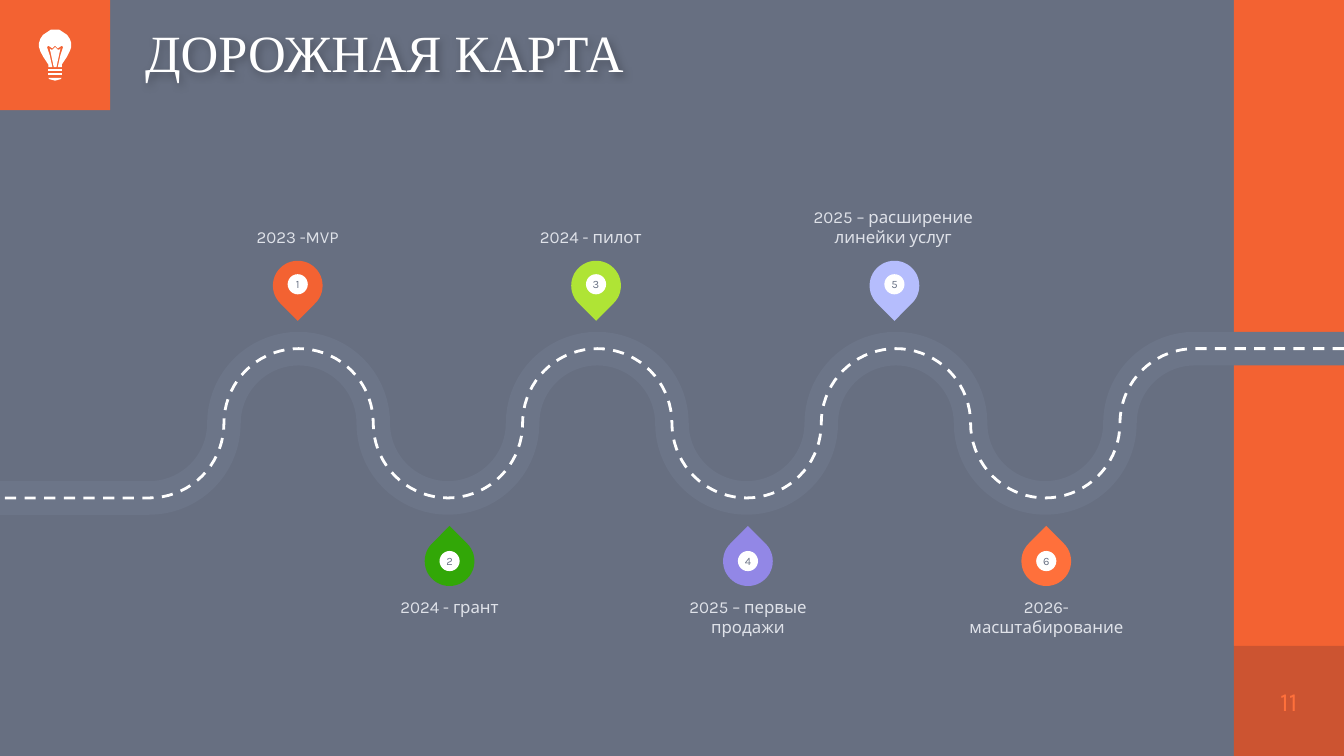
import math
from dataclasses import dataclass

from lxml import etree
from pptx import Presentation
from pptx.dml.color import RGBColor
from pptx.enum import dml, shapes, text
from pptx.oxml import ns
from pptx.util import Inches, Pt

HUES = {
    "navy": "02102E", "orange": "F36232", "white": "FFFFFF", "road": "6C7588",
    "label": "DFE2E9", "coral": "FF703B", "lime": "AFE435", "green": "32A707",
    "lilac": "B5BDFD", "violet": "9287E6",
}
WIDE, SIDE = 10, 0.82
HIGH = WIDE * 9 / 16
BEND = WIDE / 9  # distance between neighbouring bends of the road
MID = 3.15


@dataclass
class Stop:
    label: str
    hue: str
    left: float  # left edge of the label
    low: bool


STOPS = [
    Stop("2023 -MVP", "orange", 1.51, False),
    Stop("2024 - грант", "green", 2.64, True),
    Stop("2024 - пилот", "lime", 3.69, False),
    Stop("2025 – первые продажи", "violet", 4.86, True),
    Stop("2025 – расширение линейки услуг", "lilac", 5.94, False),
    Stop("2026- масштабирование", "coral", 7.08, True),
]

# Left halves of the bulb parts, in hundredths of an inch
BULB = [
    [(36, 54), (36, 56)],
    [(36, 51), (36, 53)],
    [(36, 58), (37, 59), (41, 60)],
    [(41, 35), (39, 37), (38, 37), (37, 36), (40, 50)],
    [(41, 22), (38, 22), (35, 24), (32, 26), (30, 29), (29, 32), (29, 35),
     (30, 38), (32, 42), (34, 45), (36, 48), (36, 50), (39, 50), (37, 41),
     (35, 35), (36, 34), (39, 36), (41, 34)],
]


def rgb(hue: str) -> RGBColor:
    return RGBColor.from_string(HUES[hue])


def paint(shape, hue: str, alpha: int = 100) -> None:
    shape.shadow.inherit = False
    shape.line.fill.background()
    shape.fill.solid()
    shape.fill.fore_color.rgb = rgb(hue)
    if alpha < 100:
        tone = shape.fill._xPr.find(".//" + ns.qn("a:srgbClr"))
        etree.SubElement(tone, ns.qn("a:alpha"), val=str(alpha * 1000))


def block(owner, kind, box: tuple, hue: str, alpha: int = 100):
    shape = owner.add_shape(kind, *map(Inches, box))
    paint(shape, hue, alpha)
    return shape


def write(shape, words: str, size: float, hue: str, anchor, font: str = "Karla",
          align=text.PP_ALIGN.CENTER):
    frame = shape.text_frame
    frame.margin_left = frame.margin_right = 0
    frame.margin_top = frame.margin_bottom = 0
    frame.word_wrap = True
    frame.vertical_anchor = anchor
    frame.text = words
    para = frame.paragraphs[0]
    para.alignment = align
    para.font.size, para.font.name = Pt(size), font
    para.font.color.rgb = rgb(hue)
    return para


def outline(owner, points: list, close: bool):
    spots = [(Inches(x), Inches(y)) for x, y in points]
    pen = owner.build_freeform(*spots[0])
    pen.add_line_segments(spots[1:], close=close)
    return pen.convert_to_shape()


def track() -> list:
    """Half circles from right to left, with a quarter circle at each end."""
    points, rad = [(WIDE, MID - BEND / 2)], BEND / 2
    for k in range(8, 0, -1):
        turn = -1 if k % 2 == 0 else 1
        first, last = (90 if k == 8 else 0), (90 if k == 1 else 180)
        for deg in range(first, last + 1, 5):
            a = math.radians(deg)
            points.append((k * BEND + rad * math.cos(a), MID + turn * rad * math.sin(a)))
    return points + [(0, MID + rad)]


def road(owner, points: list, hue: str, width: float, dash=None) -> None:
    line = outline(owner, points, False)
    line.shadow.inherit = False
    line.fill.background()
    line.line.color.rgb = rgb(hue)
    line.line.width = Pt(width)
    if dash:
        line.line.dash_style = dash


def pin(owner, num: int, stop: Stop) -> None:
    x = 2.03 + 1.11 * (num - 1) + (0.02 if stop.low else 0)
    y = 3.99 if stop.low else 1.94
    group = owner.add_group_shape().shapes
    drop = block(group, shapes.MSO_SHAPE.TEAR, (x, y, 0.37, 0.37), stop.hue)
    drop.rotation = 315 if stop.low else 135
    dot = block(group, shapes.MSO_SHAPE.OVAL,
                (x + 0.11, y + (0.11 if stop.low else 0.1), 0.15, 0.15), "white")
    write(dot, str(num), 6, "road", text.MSO_ANCHOR.MIDDLE)


def note(owner, stop: Stop) -> None:
    top = 4.44 if stop.low else 1.26
    box = owner.add_textbox(*map(Inches, (stop.left, top, 1.41, 0.58)))
    anchor = text.MSO_ANCHOR.TOP if stop.low else text.MSO_ANCHOR.BOTTOM
    write(box, stop.label, 9, "label", anchor)


def bulb(owner) -> None:
    group = owner.add_group_shape().shapes
    for half in BULB:
        whole = half + [(82 - x, y) for x, y in reversed(half)]
        part = outline(group, [(x / 100, y / 100) for x, y in whole], True)
        paint(part, "white")


def head(title) -> None:
    title.left, title.top, title.width, title.height = map(Inches, (1.08, 0, 8.1, SIDE))
    para = write(title, "ДОРОЖНАЯ КАРТА", 28, "white", text.MSO_ANCHOR.MIDDLE,
                 "Times New Roman", text.PP_ALIGN.LEFT)
    para.line_spacing = 0.9
    # Soft shadow under the letters
    glow = etree.SubElement(title._element.spPr, ns.qn("a:effectLst"))
    cast = etree.SubElement(glow, ns.qn("a:outerShdw"), blurRad="50800",
                            dist="25400", dir="2700000")
    tone = etree.SubElement(cast, ns.qn("a:srgbClr"), val="000000")
    etree.SubElement(tone, ns.qn("a:alpha"), val="25000")


def main() -> None:
    deck = Presentation()
    deck.slide_width, deck.slide_height = Inches(WIDE), Inches(HIGH)
    slide = deck.slides.add_slide(deck.slide_layouts[5])
    owner, rect = slide.shapes, shapes.MSO_SHAPE.RECTANGLE

    # Backdrop and side bands
    block(owner, rect, (0, 0, WIDE, HIGH), "navy", 60)
    block(owner, rect, (WIDE - SIDE, 0, SIDE, HIGH), "orange")
    block(owner, rect, (0, 0, SIDE, SIDE), "orange")

    # Title, lifted above the backdrop
    head(owner.title)
    owner._spTree.append(owner.title._element)

    # Page number
    page = block(owner, rect, (WIDE - SIDE, HIGH - SIDE, SIDE, SIDE), "navy", 16)
    write(page, "11", 14, "coral", text.MSO_ANCHOR.MIDDLE)

    # Road with its centre line
    points = track()
    road(owner, points, "road", 18)
    road(owner, points, "white", 1.5, dml.MSO_LINE.DASH)

    # Stops
    for num, stop in enumerate(STOPS, 1):
        pin(owner, num, stop)
        note(owner, stop)

    bulb(owner)
    deck.save("out.pptx")


if __name__ == "__main__":
    main()
